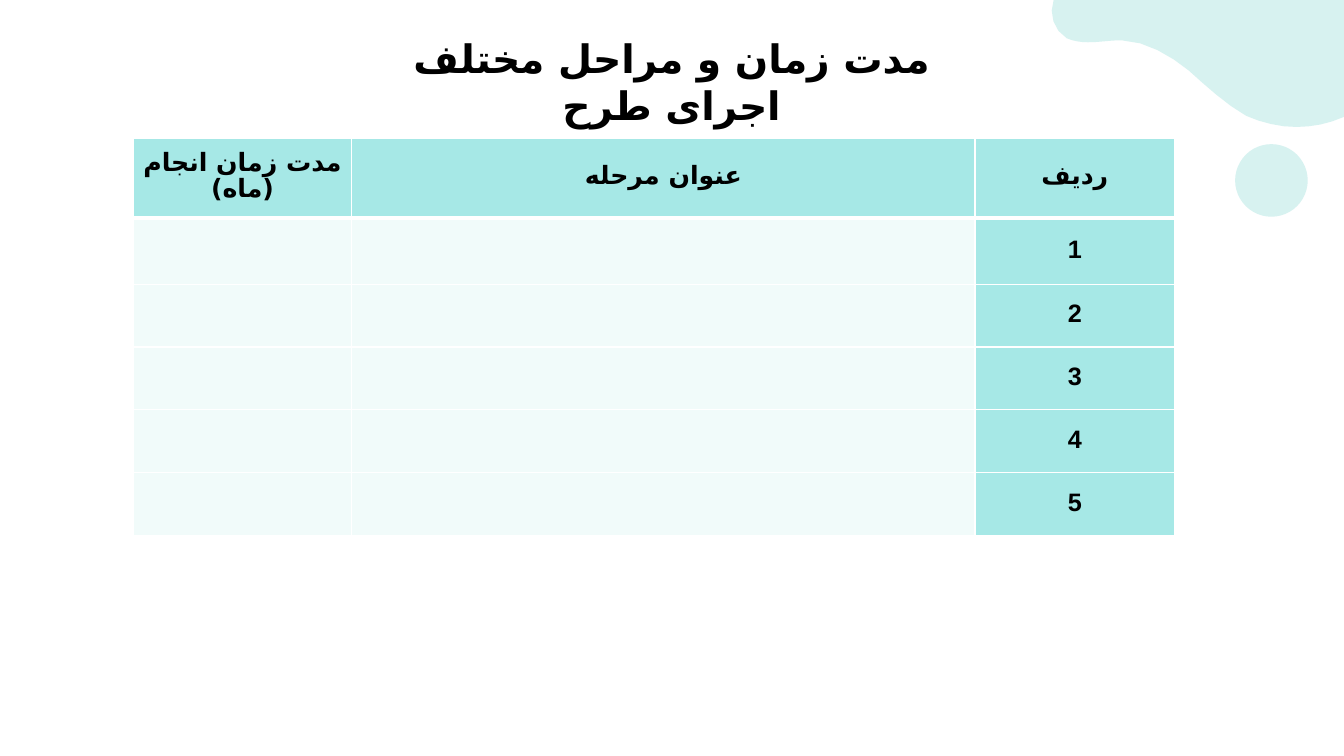
from lxml.etree import SubElement
from pptx import Presentation
from pptx.dml.color import RGBColor
from pptx.enum.shapes import MSO_SHAPE
from pptx.enum.text import MSO_ANCHOR, PP_ALIGN
from pptx.oxml.ns import qn
from pptx.util import Inches, Pt

COLORS = {"text": "000000", "accent": "A6E8E6", "body": "F1FBFA",
          "border": "FFFFFF", "decor": "D7F2F0"}
HEADINGS = ["مدت زمان انجام (ماه)", "عنوان مرحله", "ردیف"]
HEADING_FONTS = ["Arial", "Arial", "Times New Roman"]
PERSIAN_FONT = "DejaVu Sans"
NUMBER_FONT = "Arial"
COLUMN_WIDTHS = [2.17, 6.18, 1.98]
STAGE_COUNT = 5
TABLE_HEIGHT = 3.94
TOP_ROWS = [0.79, 0.66]
OTHER_ROW = (TABLE_HEIGHT - sum(TOP_ROWS)) / (STAGE_COUNT - 1)
ROW_HEIGHTS = TOP_ROWS + [OTHER_ROW] * (STAGE_COUNT - 1)
WAVE_CORNER = (2.93, 0)
WAVE_START = (2.93, 1.16)
WAVE_CURVES = [
    [(2.77, 1.23), (2.62, 1.26), (2.46, 1.26)],
    [(2.29, 1.26), (2.12, 1.22), (1.96, 1.15)],
    [(1.75, 1.03), (1.57, 0.86), (1.39, 0.7)],
    [(1.2, 0.55), (0.98, 0.41), (0.72, 0.4)],
    [(0.61, 0.4), (0.5, 0.42), (0.39, 0.42)],
    [(0.32, 0.42), (0.25, 0.41), (0.18, 0.38)],
    [(0.05, 0.3), (0, 0.14), (0.05, 0)],
]
CURVE_STEPS = 4
UNITS_PER_INCH = 1000


def apply_format(target, values):
    for name, value in values.items():
        setattr(target, name, value)


def write_text(frame, text, size, font_name, script_font, line_spacing):
    frame.text = text
    paragraph = frame.paragraphs[0]
    apply_format(paragraph, {"alignment": PP_ALIGN.CENTER, "line_spacing": line_spacing,
                             "space_before": Pt(0)})
    paragraph._p.get_or_add_pPr().set("rtl", "1")
    font = paragraph.runs[0].font
    apply_format(font, {"size": Pt(size), "bold": True, "name": font_name})
    font.color.rgb = RGBColor.from_string(COLORS["text"])
    SubElement(font._element, qn("a:cs")).set("typeface", script_font)


def paint_decor(shape):
    shape.shadow.inherit = False
    shape.fill.solid()
    shape.fill.fore_color.rgb = RGBColor.from_string(COLORS["decor"])
    shape.line.fill.background()


def curve_points(start, first, second, end):
    for step in range(1, CURVE_STEPS + 1):
        t = step / CURVE_STEPS
        weights = ((1 - t) ** 3, 3 * t * (1 - t) ** 2, 3 * t * t * (1 - t), t ** 3)
        yield tuple(sum(weight * point[axis] for weight, point
                        in zip(weights, (start, first, second, end))) for axis in (0, 1))


def add_corner_decor(slide, left, top):
    outline = [WAVE_CORNER, WAVE_START]
    for curve in WAVE_CURVES:
        outline.extend(curve_points(outline[-1], *curve))
    vertices = [(x * UNITS_PER_INCH, y * UNITS_PER_INCH) for x, y in outline]
    builder = slide.shapes.build_freeform(*vertices[0], scale=Inches(1) / UNITS_PER_INCH)
    builder.add_line_segments(vertices[1:], close=True)
    paint_decor(builder.convert_to_shape(Inches(left), Inches(top)))
    paint_decor(slide.shapes.add_shape(MSO_SHAPE.OVAL, Inches(left + 1.85), Inches(top + 1.43),
                                       Inches(0.72), Inches(0.72)))


def add_title(slide, left, top, width, height):
    title = slide.shapes.title
    apply_format(title, {"left": Inches(left), "top": Inches(top),
                         "width": Inches(width), "height": Inches(height)})
    apply_format(title.text_frame, {"word_wrap": True, "vertical_anchor": MSO_ANCHOR.TOP})
    write_text(title.text_frame, "مدت زمان و مراحل مختلف اجرای طرح", 28,
               "Arial", PERSIAN_FONT, 1.0)


def style_cell(cell, color, bottom_width):
    properties = cell._tc.get_or_add_tcPr()
    for side, width in {"lnL": 1, "lnR": 1, "lnT": 1, "lnB": bottom_width}.items():
        border = SubElement(properties, qn(f"a:{side}"), w=str(Pt(width)))
        fill = SubElement(border, qn("a:solidFill"))
        SubElement(fill, qn("a:srgbClr"), val=COLORS["border"])
    cell.fill.solid()
    cell.fill.fore_color.rgb = RGBColor.from_string(COLORS[color])
    apply_format(cell, {"vertical_anchor": MSO_ANCHOR.MIDDLE,
                        "margin_left": Inches(0.07), "margin_right": Inches(0.07),
                        "margin_top": 0, "margin_bottom": 0})


def add_schedule(slide, left, top, width, height):
    number_column = len(HEADINGS) - 1
    schedule = slide.shapes.add_table(STAGE_COUNT + 1, len(HEADINGS), Inches(left), Inches(top),
                                      Inches(width), Inches(height)).table
    for column, column_width in zip(schedule.columns, COLUMN_WIDTHS):
        column.width = Inches(column_width)
    for row_index, row_height in enumerate(ROW_HEIGHTS):
        schedule.rows[row_index].height = Inches(row_height)
        for column_index, heading in enumerate(HEADINGS):
            cell = schedule.cell(row_index, column_index)
            is_heading = row_index == 0
            is_labelled = is_heading or column_index == number_column
            style_cell(cell, "accent" if is_labelled else "body", 3 if is_heading else 1)
            if is_labelled:
                write_text(cell.text_frame, heading if is_heading else str(row_index),
                           18, HEADING_FONTS[column_index],
                           PERSIAN_FONT if is_heading else NUMBER_FONT, Pt(18))


def build_schedule_slide(presentation):
    slide = presentation.slides.add_slide(presentation.slide_layouts[5])
    add_corner_decor(slide, 10.4, 0)
    add_title(slide, 3.97, 0.29, 5.38, 0.57)
    add_schedule(slide, 1.32, 1.37, sum(COLUMN_WIDTHS), TABLE_HEIGHT)


def main():
    presentation = Presentation()
    apply_format(presentation, {"slide_width": Inches(13.33), "slide_height": Inches(7.5)})
    build_schedule_slide(presentation)
    presentation.save("out.pptx")


if __name__ == "__main__":
    main()
